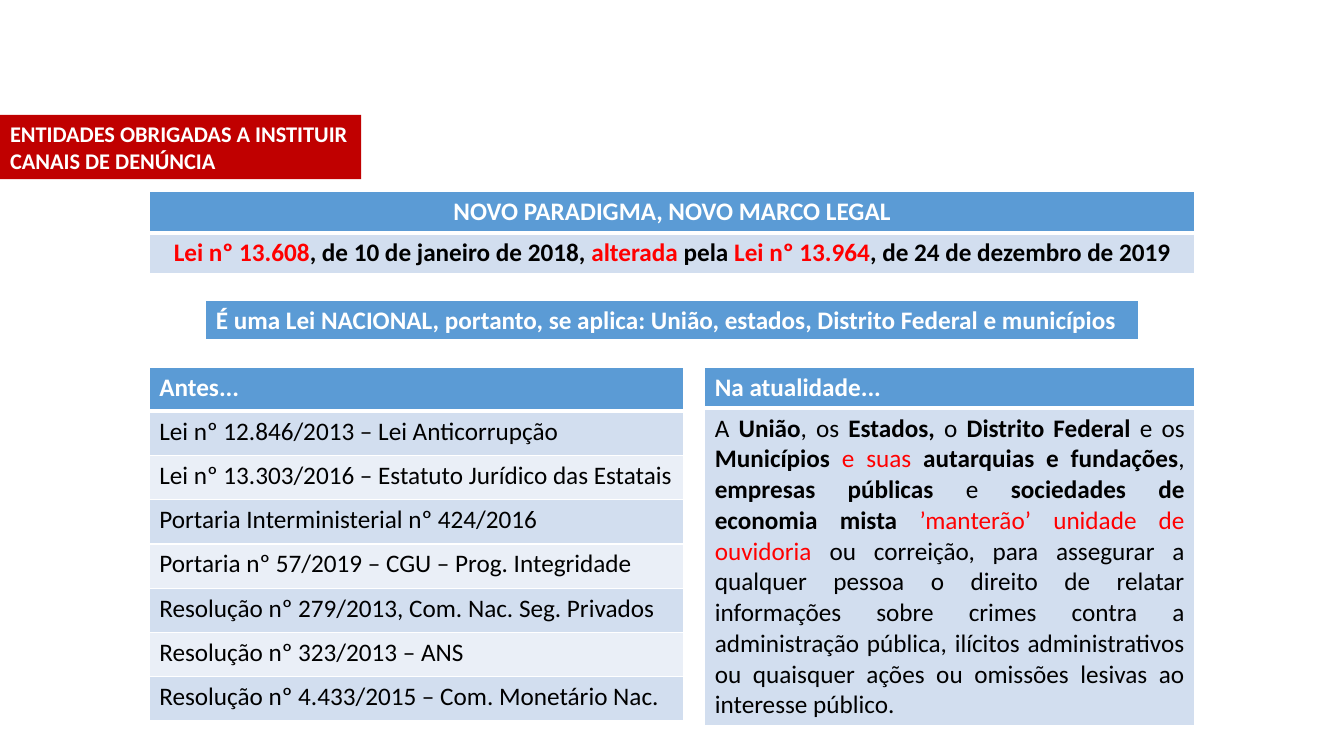
import pptx
import pptx.dml.color
import pptx.enum.text
import pptx.oxml
import pptx.oxml.ns
import pptx.util

Pt = pptx.util.Pt
ALIGN = pptx.enum.text.PP_ALIGN
FONT = "Calibri"
HEX = {"banner": "C00000", "head": "5B9BD5", "dark": "D2DEEF",
       "light": "EAEFF7", "white": "FFFFFF", "black": "000000",
       "red": "FF0000"}

# Each run is (text, colour, bold).
LAW = [
    ("Lei nº 13.608", "red", True),
    (", de 10 de janeiro de 2018, ", "black", True),
    ("alterada", "red", True),
    (" pela ", "black", True),
    ("Lei nº 13.964", "red", True),
    (", de 24 de dezembro de 2019", "black", True),
]
BEFORE = [
    "Lei nº 12.846/2013 – Lei Anticorrupção",
    "Lei nº 13.303/2016 – Estatuto Jurídico das Estatais",
    "Portaria Interministerial nº 424/2016",
    "Portaria nº 57/2019 – CGU – Prog. Integridade",
    "Resolução nº 279/2013, Com. Nac. Seg. Privados",
    "Resolução nº 323/2013 – ANS",
    "Resolução nº 4.433/2015 – Com. Monetário Nac.",
]
NOW = [
    ("A ", "black", False),
    ("União", "black", True),
    (", os ", "black", False),
    ("Estados,", "black", True),
    (" o ", "black", False),
    ("Distrito Federal", "black", True),
    (" e os ", "black", False),
    ("Municípios ", "black", True),
    ("e suas ", "red", False),
    ("autarquias e fundações", "black", True),
    (", ", "black", False),
    ("empresas públicas", "black", True),
    (" e ", "black", False),
    ("sociedades de economia mista ", "black", True),
    ("’manterão’ unidade de ouvidoria", "red", False),
    (" ou correição, para assegurar a qualquer pessoa o direito de relatar "
     "informações sobre crimes contra a administração pública, ilícitos "
     "administrativos ou quaisquer ações ou omissões lesivas ao interesse "
     "público.", "black", False),
]


def rgb(name):
    return pptx.dml.color.RGBColor.from_string(HEX[name])


def write(frame, runs, size, align):
    para = frame.paragraphs[0]
    para.alignment = align
    for text, color, bold in runs:
        run = para.add_run()
        run.text = text
        run.font.name = FONT
        run.font.size = Pt(size)
        run.font.bold = bold
        run.font.color.rgb = rgb(color)


def edge(cell, top, bottom):
    """Draw white borders, with widths in points for top and bottom."""
    props = cell._tc.get_or_add_tcPr()
    sides = [("L", 1), ("R", 1), ("T", top), ("B", bottom)]
    for spot, (side, width) in enumerate(sides):
        line = pptx.oxml.parse_xml(
            f'<a:ln{side} {pptx.oxml.ns.nsdecls("a")} w="{Pt(width)}">'
            f'<a:solidFill><a:srgbClr val="{HEX["white"]}"/></a:solidFill>'
            f'</a:ln{side}>')
        props.insert(spot, line)


def banner(slide, box, text):
    title = slide.shapes.title
    title.left, title.top, title.width, title.height = map(Pt, box)
    title.fill.solid()
    title.fill.fore_color.rgb = rgb("banner")
    frame = title.text_frame
    frame.word_wrap = True
    frame.auto_size = pptx.enum.text.MSO_AUTO_SIZE.NONE
    frame.vertical_anchor = pptx.enum.text.MSO_ANCHOR.BOTTOM
    write(frame, [(text, "white", True)], 16, ALIGN.LEFT)


def panel(slide, box, head, rows, heights, align=ALIGN.LEFT,
          top=ALIGN.LEFT):
    """Place a one-column table: a blue head over banded rows."""
    lines = [[(head, "white", True)]] + rows
    table = slide.shapes.add_table(len(lines), 1, *map(Pt, box)).table
    for index, (runs, height) in enumerate(zip(lines, heights)):
        table.rows[index].height = Pt(height)
        cell = table.cell(index, 0)
        if index == 0:
            color = "head"
        else:
            color = "dark" if index % 2 else "light"
        cell.fill.solid()
        cell.fill.fore_color.rgb = rgb(color)
        edge(cell, 3 if index == 1 else 1, 3 if index == 0 else 1)
        write(cell.text_frame, runs, 18, align if index else top)


def main():
    deck = pptx.Presentation()
    deck.slide_width, deck.slide_height = Pt(960), Pt(540)
    slide = deck.slides.add_slide(deck.slide_layouts[5])

    left, row, tall = 106.6, 29.2, 252.8
    banner(slide, (0, 82, 258, 46),
           "ENTIDADES OBRIGADAS A INSTITUIR CANAIS DE DENÚNCIA")
    panel(slide, (left, 137, 747, 2 * row),
          "NOVO PARADIGMA, NOVO MARCO LEGAL", [LAW], [row] * 2,
          ALIGN.CENTER, ALIGN.CENTER)
    panel(slide, (147, 214.4, 666, row),
          "É uma Lei NACIONAL, portanto, se aplica: União, estados, "
          "Distrito Federal e municípios", [], [row])
    panel(slide, (left, 262.2, 382, tall), "Antes...",
          [[(law, "black", False)] for law in BEFORE], [tall / 8] * 8)
    panel(slide, (503.4, 262.2, 350, tall), "Na atualidade...",
          [NOW], [row, tall - row], ALIGN.JUSTIFY)
    deck.save("out.pptx")


if __name__ == "__main__":
    main()
